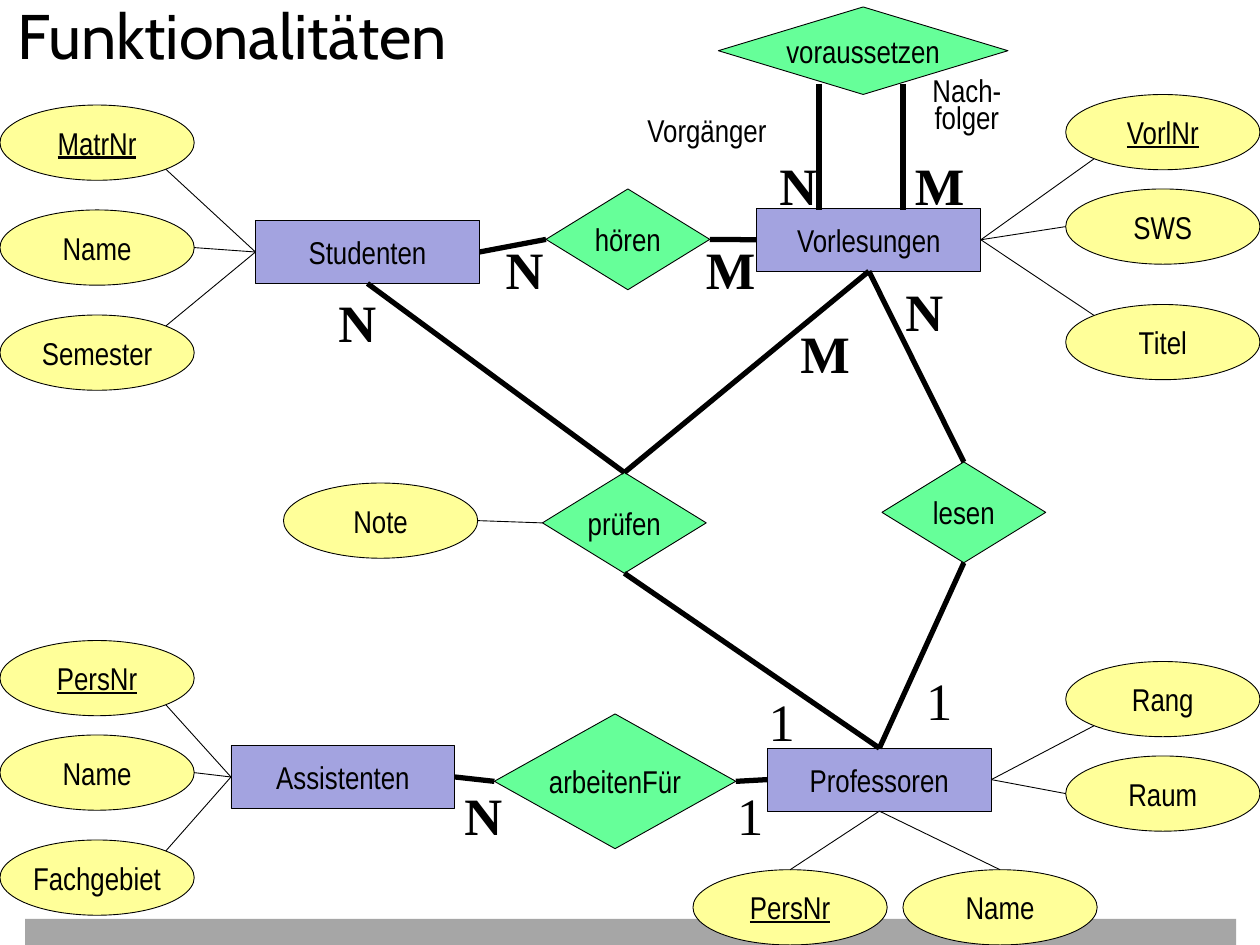
from dataclasses import dataclass
from math import sqrt

from lxml import etree
from pptx import Presentation
from pptx import util as u
from pptx.dml.color import RGBColor
from pptx.enum import shapes, text
from pptx.oxml.ns import qn


@dataclass(frozen=True)
class Theme:
    ink: str = "000000"
    entity: str = "A3A3E0"
    attribute: str = "FFFF99"
    relation: str = "66FF99"
    bar: str = "A6A6A6"
    label_font: str = "Arial Narrow"
    title_font: str = "Cabin"
    count_font: str = "Times New Roman"
    label_size: float = 18
    title_size: float = 36
    count_size: float = 30
    thin: float = 0.5
    thick: float = 3


TOP, LEFT, BOTTOM, RIGHT = (0, -1), (-1, 0), (0, 1), (1, 0)
UP_LEFT, UP_RIGHT, DOWN_LEFT, DOWN_RIGHT = (-1, -1), (1, -1), (-1, 1), (1, 1)


def edge_point(shape, side):
    """Point on the outline towards a side; diagonals lie on an ellipse."""
    reach = 1 / sqrt(2) if all(side) else 1
    return (shape.left.pt + shape.width.pt / 2 * (1 + reach * side[0]),
            shape.top.pt + shape.height.pt / 2 * (1 + reach * side[1]))


class Diagram:
    def __init__(self, page, theme):
        self.page = page
        self.theme = theme

    def style_text(self, box, font, size, bold=False, underline=False,
                   align=text.PP_ALIGN.CENTER):
        for para in box.text_frame.paragraphs:
            para.alignment = align
            for span in para.runs:
                span.font.name = font
                span.font.size = u.Pt(size)
                span.font.bold = bold
                span.font.underline = underline
                span.font.color.rgb = RGBColor.from_string(self.theme.ink)

    def shape(self, kind, x, y, width, height, fill):
        shape = self.page.shapes.add_shape(kind, *map(u.Pt, (x, y, width, height)))
        shape.shadow.inherit = False
        shape.fill.solid()
        shape.fill.fore_color.rgb = RGBColor.from_string(fill)
        return shape

    def bar(self, x, y, width, height):
        bar = self.shape(shapes.MSO_SHAPE.RECTANGLE, x, y, width, height, self.theme.bar)
        bar.line.fill.background()

    def node(self, kind, label, x, y, width, height, fill, underline=False):
        node = self.shape(kind, x, y, width, height, fill)
        node.line.color.rgb = RGBColor.from_string(self.theme.ink)
        node.line.width = u.Pt(self.theme.thin)
        frame = node.text_frame
        frame.text = label
        frame.word_wrap = False
        frame.vertical_anchor = text.MSO_ANCHOR.MIDDLE
        self.style_text(node, self.theme.label_font, self.theme.label_size,
                        underline=underline)
        return node

    def entity(self, label, x, y):
        return self.node(shapes.MSO_SHAPE.RECTANGLE, label, x, y, 128, 36,
                         self.theme.entity)

    def attribute(self, label, x, y, key=False):
        return self.node(shapes.MSO_SHAPE.OVAL, label, x, y, 111, 43,
                         self.theme.attribute, underline=key)

    def relation(self, label, x, y, width=93.6, height=57.6):
        return self.node(shapes.MSO_SHAPE.DIAMOND, label, x, y, width, height,
                         self.theme.relation)

    def line(self, start, end, width):
        line = self.page.shapes.add_connector(
            shapes.MSO_CONNECTOR.STRAIGHT, *map(u.Pt, (*start, *end)))
        line.line.color.rgb = RGBColor.from_string(self.theme.ink)
        line.line.width = u.Pt(width)
        etree.SubElement(line._element.spPr, qn("a:effectLst"))

    def link(self, first, first_side, second, second_side, width):
        self.line(edge_point(first, first_side), edge_point(second, second_side), width)

    def text_box(self, content, x, y, width, height, wrap=True):
        box = self.page.shapes.add_textbox(*map(u.Pt, (x, y, width, height)))
        box.text_frame.word_wrap = wrap
        box.text_frame.text = content
        return box

    def title(self, content):
        box = self.text_box(content, 3, 15, 414, 30)
        box.text_frame.vertical_anchor = text.MSO_ANCHOR.BOTTOM
        self.style_text(box, self.theme.title_font, self.theme.title_size,
                        align=text.PP_ALIGN.LEFT)

    def role(self, content, x, y, width, height, line_spacing=1.0):
        box = self.text_box(content, x, y, width, height)
        self.style_text(box, self.theme.label_font, self.theme.label_size)
        for para in box.text_frame.paragraphs:
            para.line_spacing = line_spacing

    def cardinality(self, symbol, x, y):
        width = {"1": 29.5, "N": 36.5, "M": 43}[symbol]
        box = self.text_box(symbol, x, y, width, 44, wrap=False)
        self.style_text(box, self.theme.count_font, self.theme.count_size,
                        bold=symbol != "1")


ENTITIES = {
    "Studenten": (146, 126),
    "Assistenten": (132, 426),
    "Professoren": (438.5, 427.5),
    "Vorlesungen": (432.5, 119),
}
RELATIONS = {
    "hören": (312, 108),
    "prüfen": (310, 270),
    "lesen": (504, 264),
    "arbeitenFür": (282.5, 408, 138, 77),
    "voraussetzen": (410.5, 4, 165.5, 50),
}
WEST, EAST, SOUTH = 0, 609, 497
# owner, side of owner, label, x, y, side of attribute, is key
ATTRIBUTES = [
    ("Studenten", LEFT, "MatrNr", WEST, 60, DOWN_RIGHT, True),
    ("Studenten", LEFT, "Name", WEST, 120, RIGHT, False),
    ("Studenten", LEFT, "Semester", WEST, 180, UP_RIGHT, False),
    ("Assistenten", LEFT, "PersNr", WEST, 366, DOWN_RIGHT, True),
    ("Assistenten", LEFT, "Name", WEST, 420, RIGHT, False),
    ("Assistenten", LEFT, "Fachgebiet", WEST, 480, UP_RIGHT, False),
    ("Vorlesungen", RIGHT, "VorlNr", EAST, 54, DOWN_LEFT, True),
    ("Vorlesungen", RIGHT, "SWS", EAST, 108, LEFT, False),
    ("Vorlesungen", RIGHT, "Titel", EAST, 174, UP_LEFT, False),
    ("Professoren", RIGHT, "Rang", EAST, 378, DOWN_LEFT, False),
    ("Professoren", RIGHT, "Raum", EAST, 432, LEFT, False),
    ("Professoren", BOTTOM, "PersNr", 396, SOUTH, TOP, True),
    ("Professoren", BOTTOM, "Name", 516, SOUTH, TOP, False),
    ("prüfen", LEFT, "Note", 162, 276, RIGHT, False),
]
LINKS = [
    ("Studenten", RIGHT, "hören", LEFT),
    ("hören", RIGHT, "Vorlesungen", LEFT),
    ("Studenten", BOTTOM, "prüfen", TOP),
    ("Vorlesungen", BOTTOM, "prüfen", TOP),
    ("prüfen", BOTTOM, "Professoren", TOP),
    ("Vorlesungen", BOTTOM, "lesen", TOP),
    ("lesen", BOTTOM, "Professoren", TOP),
    ("Assistenten", RIGHT, "arbeitenFür", LEFT),
    ("arbeitenFür", RIGHT, "Professoren", LEFT),
]
CARDINALITIES = {
    "1": [(522, 378), (432, 390), (414, 444)],
    "N": [(438, 84), (186, 162), (510, 156), (258, 444), (281.5, 132)],
    "M": [(450, 180), (515.5, 84), (396, 132)],
}


def main():
    deck = Presentation()
    deck.slide_width, deck.slide_height = u.Pt(720), u.Pt(540)
    theme = Theme()
    diagram = Diagram(deck.slides.add_slide(deck.slide_layouts[6]), theme)

    diagram.bar(14.4, 525, 692, 15)
    diagram.title("Funktionalitäten")
    nodes = {name: diagram.entity(name, *place) for name, place in ENTITIES.items()}
    nodes |= {name: diagram.relation(name, *place) for name, place in RELATIONS.items()}
    for owner, owner_side, label, x, y, side, key in ATTRIBUTES:
        attribute = diagram.attribute(label, x, y, key)
        diagram.link(nodes[owner], owner_side, attribute, side, theme.thin)
    for first, first_side, second, second_side in LINKS:
        diagram.link(nodes[first], first_side, nodes[second], second_side, theme.thick)
    for x in (468, 516):
        diagram.line((x, 48), (x, 120), theme.thick)

    diagram.role("Nach-\nfolger", 498, 43, 109, 39, line_spacing=0.7)
    diagram.role("Vorgänger", 336, 60, 136, 29)
    for symbol, places in CARDINALITIES.items():
        for place in places:
            diagram.cardinality(symbol, *place)
    deck.save("out.pptx")


if __name__ == "__main__":
    main()
